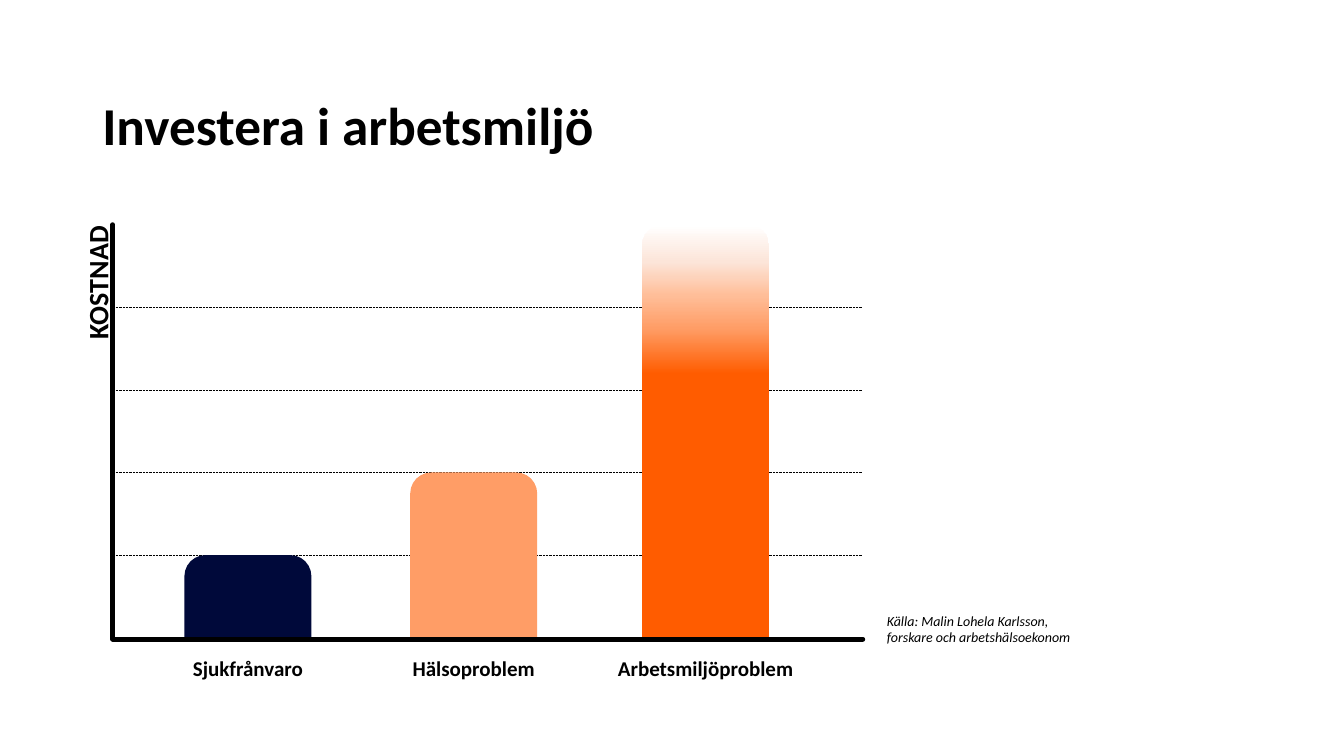
from copy import deepcopy
from dataclasses import dataclass

from lxml import etree
from pptx import Presentation
from pptx import util as u
from pptx.dml.color import RGBColor
from pptx.enum import dml, shapes, text
from pptx.oxml.ns import qn


@dataclass(frozen=True)
class Theme:
    font: str = "Calibri"
    ink: str = "000000"
    navy: str = "00093A"
    peach: str = "FF9D66"
    fade: tuple = ((0, "FFFFFF"), (9, "FCE5D9"), (17, "FFBE99"),
                   (25, "FF9D66"), (36, "FF5C00"))
    title_size: float = 38
    axis_size: float = 20
    label_size: float = 15
    source_size: float = 10
    axis_weight: float = 3.5
    grid_weight: float = 0.5


THEME = Theme()


def add_text(slide, words, left, top, width, height, *, size, bold=False,
             italic=False, align=text.PP_ALIGN.LEFT, wrap=True, rotation=0):
    shape = slide.shapes.add_textbox(u.Pt(left), u.Pt(top), u.Pt(width), u.Pt(height))
    shape.rotation = rotation
    frame = shape.text_frame
    frame.word_wrap = wrap
    frame.vertical_anchor = text.MSO_ANCHOR.MIDDLE
    paragraph = frame.paragraphs[0]
    paragraph.text = words
    paragraph.alignment = align
    for run in paragraph.runs:
        run.font.name = THEME.font
        run.font.size = u.Pt(size)
        run.font.bold = bold
        run.font.italic = italic
        run.font.color.rgb = RGBColor.from_string(THEME.ink)


def add_line(slide, x1, y1, x2, y2, weight, dotted=False):
    line = slide.shapes.add_connector(
        shapes.MSO_CONNECTOR.STRAIGHT, u.Pt(x1), u.Pt(y1), u.Pt(x2), u.Pt(y2))
    line.line.color.rgb = RGBColor.from_string(THEME.ink)
    line.line.width = u.Pt(weight)
    if dotted:
        line.line.dash_style = dml.MSO_LINE.ROUND_DOT
    else:
        line.line._get_or_add_ln().set("cap", "rnd")
    etree.SubElement(line._element.spPr, qn("a:effectLst"))


def fill_gradient(shape, stops):
    """Fill from top to bottom with (percent, colour) stops."""
    shape.fill.gradient()
    shape.fill.gradient_angle = 270
    stop_list = shape._element.spPr.find(".//" + qn("a:gsLst"))
    pattern = deepcopy(stop_list[0])
    for child in list(stop_list):
        stop_list.remove(child)
    for _ in stops:
        stop_list.append(deepcopy(pattern))
    for stop, (percent, colour) in zip(shape.fill.gradient_stops, stops):
        stop.position = percent / 100
        stop.color.rgb = RGBColor.from_string(colour)


def add_bar(slide, left, top, width, height, fill, radius=15):
    bar = slide.shapes.add_shape(
        shapes.MSO_SHAPE.ROUND_2_SAME_RECTANGLE,
        u.Pt(left), u.Pt(top), u.Pt(width), u.Pt(height))
    bar.shadow.inherit = False
    bar.line.fill.background()
    bar.adjustments[0] = radius / min(width, height)
    if isinstance(fill, str):
        bar.fill.solid()
        bar.fill.fore_color.rgb = RGBColor.from_string(fill)
    else:
        fill_gradient(bar, fill)


def add_title(slide, left, top, width, height):
    add_text(slide, "Investera i arbetsmiljö", left, top, width, height,
             size=THEME.title_size, bold=True)


def add_cost_diagram(slide, left, top, width, height):
    right, bottom = left + width, top + height
    step, bar_width = 59, 90.7

    # Grid lines, counted from the top
    for level in range(1, 5):
        y = top + level * step
        add_line(slide, left, y, right, y, THEME.grid_weight, dotted=True)

    # Bars and their labels: name, centre, grid level of the top, fill, label width
    bars = (
        ("Sjukfrånvaro", 96.5, 4, THEME.navy, 102),
        ("Hälsoproblem", 257.8, 3, THEME.peach, 117),
        ("Arbetsmiljöproblem", 423.4, 0, THEME.fade, 153),
    )
    for name, centre, level, fill, label_width in bars:
        bar_top = top + level * step
        add_bar(slide, left + centre - bar_width / 2, bar_top,
                bar_width, bottom - bar_top, fill)
        add_text(slide, name, left + centre - label_width / 2, bottom + 8,
                 label_width, 26, size=THEME.label_size, bold=True,
                 align=text.PP_ALIGN.CENTER)

    # Axes
    add_line(slide, left, top, left, bottom, THEME.axis_weight)
    add_line(slide, left, bottom, right, bottom, THEME.axis_weight)
    add_text(slide, "KOSTNAD", left - 64.8, top + 31.7, 107.3, 31.7,
             size=THEME.axis_size, bold=True, align=text.PP_ALIGN.RIGHT, rotation=270)


def add_source(slide, left, top, width, height):
    add_text(slide, "Källa: Malin Lohela Karlsson,\vforskare och arbetshälsoekonom",
             left, top, width, height, size=THEME.source_size, italic=True, wrap=False)


def main():
    presentation = Presentation()
    presentation.slide_width = u.Pt(960)
    presentation.slide_height = u.Pt(540)
    slide = presentation.slides.add_slide(presentation.slide_layouts[6])
    add_title(slide, 66, 60, 881, 57)
    add_cost_diagram(slide, 80.6, 160.5, 535.7, 296)
    add_source(slide, 626.4, 433.4, 147.6, 31.7)
    presentation.save("out.pptx")


if __name__ == "__main__":
    main()
